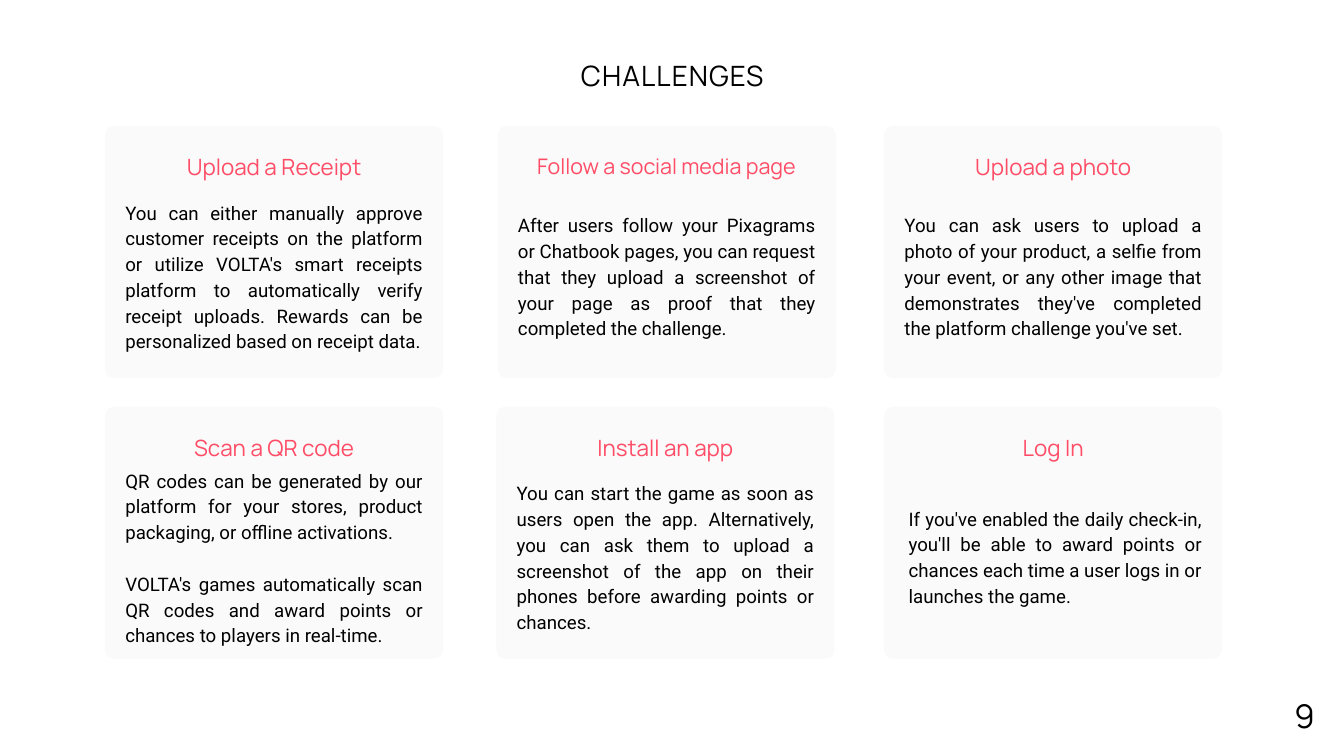
from dataclasses import dataclass
from pptx import Presentation
from pptx.dml.color import RGBColor
from pptx.enum.shapes import MSO_SHAPE
from pptx.enum.text import MSO_ANCHOR, MSO_AUTO_SIZE, PP_ALIGN
from pptx.util import Pt

PX = 9525  # EMU in one px, 96 px to the inch


@dataclass(frozen=True)
class Theme:
    ink: RGBColor = RGBColor(0, 0, 0)
    pink: RGBColor = RGBColor(0xFF, 0x4D, 0x67)
    panel: RGBColor = RGBColor(0xFA, 0xFA, 0xFA)
    display: str = "Manrope"
    text: str = "Roboto"
    title: int = 30
    head: int = 24
    body: int = 20
    number: int = 35


THEME = Theme()
CARD_W, CARD_H, RADIUS = 483, 360, 13
HEAD_Y, HEAD_H = 39, 40
BODY_MID, LINE_H, PAD = 211, 36, 29
BODY_LEAD = 27.6

# Left, top, heading, heading size, body inset, body lines, paragraphs
CARDS = [
    (150, 180, "Upload a Receipt", THEME.head, PAD, 6, [
        "You can either manually approve customer receipts on the platform or "
        "utilize VOLTA's smart receipts platform to automatically verify "
        "receipt uploads. Rewards can be personalized based on receipt data."]),
    (711, 180, "Follow a social media page", THEME.head - 1, PAD, 5, [
        "After users follow your Pixagrams or Chatbook pages, you can request "
        "that they upload a screenshot of your page as proof that they "
        "completed the challenge."]),
    (1263, 180, "Upload a photo", THEME.head, PAD, 5, [
        "You can ask users to upload a photo of your product, a selfie from "
        "your event, or any other image that demonstrates they've completed "
        "the platform challenge you've set."]),
    (150, 581, "Scan a QR code", THEME.head, PAD, 7, [
        "QR codes can be generated by our platform for your stores, product "
        "packaging, or offline activations.",
        "VOLTA's games automatically scan QR codes and award points or "
        "chances to players in real-time."]),
    (709, 581, "Install an app", THEME.head, PAD, 6, [
        "You can start the game as soon as users open the app. Alternatively, "
        "you can ask them to upload a screenshot of the app on their phones "
        "before awarding points or chances."]),
    (1263, 581, "Log In", THEME.head, PAD + 6, 4, [
        "If you've enabled the daily check-in, you'll be able to award points "
        "or chances each time a user logs in or launches the game."]),
]


def emu(*box):
    return [v * PX for v in box]


def style(para, font, size, color, lead, align):
    para.alignment = align
    para.line_spacing = Pt(lead)
    para.font.name = font
    para.font.size = Pt(size)
    para.font.color.rgb = color


def set_frame(frame, pad=0):
    frame.word_wrap = True
    frame.auto_size = MSO_AUTO_SIZE.NONE
    frame.margin_left = frame.margin_right = pad * PX
    frame.margin_top = frame.margin_bottom = pad * PX


def add_text(slide, box, paras, *look):
    frame = slide.shapes.add_textbox(*emu(*box)).text_frame
    set_frame(frame)
    for i, words in enumerate(paras):
        para = frame.add_paragraph() if i else frame.paragraphs[0]
        para.text = words
        style(para, *look)
        if i:
            para.space_before = Pt(BODY_LEAD)  # one line between paragraphs


def add_title(slide, box, words):
    title = slide.shapes.title
    title.left, title.top, title.width, title.height = emu(*box)
    frame = title.text_frame
    set_frame(frame, 6)
    frame.vertical_anchor = MSO_ANCHOR.MIDDLE
    para = frame.paragraphs[0]
    run = para.add_run()
    run.text = words
    style(para, THEME.display, THEME.title, THEME.ink, 42, PP_ALIGN.CENTER)
    run.font._element.set("spc", "120")  # letter spacing


def add_card(slide, x, y, head, size, inset, lines, paras):
    # Panel
    panel = slide.shapes.add_shape(MSO_SHAPE.ROUNDED_RECTANGLE,
                                   *emu(x, y, CARD_W, CARD_H))
    panel.adjustments[0] = RADIUS / CARD_H
    panel.shadow.inherit = False
    panel.fill.solid()
    panel.fill.fore_color.rgb = THEME.panel
    panel.line.fill.background()
    # Heading
    add_text(slide, (x, y + HEAD_Y, CARD_W, HEAD_H), [head],
             THEME.display, size, THEME.pink, size * 1.2, PP_ALIGN.CENTER)
    # Body, centred on one height in every card
    tall = lines * LINE_H
    wide = CARD_W - PAD - inset
    add_text(slide, (x + inset, y + BODY_MID - tall // 2, wide, tall), paras,
             THEME.text, THEME.body, THEME.ink, BODY_LEAD, PP_ALIGN.JUSTIFY)


def add_number(slide, box, words):
    add_text(slide, box, [words], THEME.display, THEME.number, THEME.ink,
             66.5, PP_ALIGN.LEFT)


def main():
    deck = Presentation()
    deck.slide_width, deck.slide_height = emu(1920, 1080)
    slide = deck.slides.add_slide(deck.slide_layouts[5])
    add_title(slide, (756, -41, 409, 290), "CHALLENGES")
    for card in CARDS:
        add_card(slide, *card)
    add_number(slide, (1849, 962, 30, 84), "9")
    deck.save("out.pptx")


if __name__ == "__main__":
    main()
